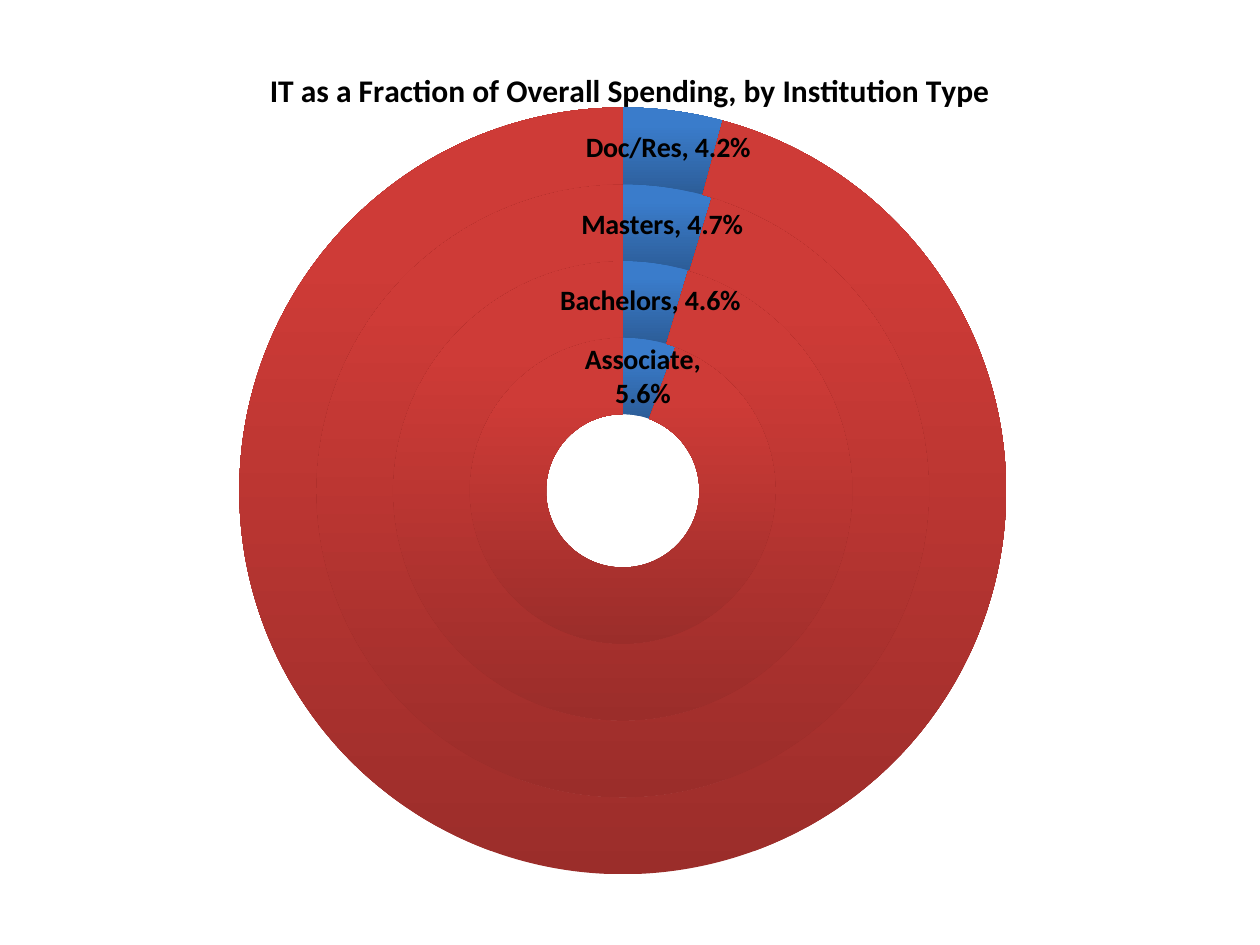
from pptx import Presentation
from pptx.chart.data import CategoryChartData
from pptx.dml.color import RGBColor
from pptx.enum.chart import XL_CHART_TYPE
from pptx.oxml import parse_xml
from pptx.oxml.ns import nsdecls, qn
from pptx.util import Inches, Pt


def color(value):
    return RGBColor.from_string(value)


def chart_xml(tag, content):
    return parse_xml(f"<c:{tag} {nsdecls('c')}>{content}</c:{tag}>")


SPENDING = {"Associate": 0.056, "Bachelors": 0.046, "Masters": 0.047, "Doc/Res": 0.042}
GRADIENTS = [("2C5D98", "3A7CCB"), ("9B2D2A", "CE3B37")]
PLOT_LAYOUT = {"x": 0.173, "y": 0.078, "w": 0.642, "h": 0.885}

deck = Presentation()
deck.slide_width = Inches(10)
deck.slide_height = Inches(7.5)
page = deck.slides.add_slide(deck.slide_layouts[6])

data = CategoryChartData(number_format="0.0%")
data.categories = ["1", "2"]
for institution, share in SPENDING.items():
    data.add_series(institution, [share, round(1 - share, 3)])

chart = page.shapes.add_chart(
    XL_CHART_TYPE.DOUGHNUT, Inches(0.26), Inches(0.31), Inches(9.48), Inches(6.89), data
).chart
chart.has_legend = False
chart.font.name = "Calibri"
chart.font.size = Pt(10)
chart.font.color.rgb = color("000000")

chart.has_title = True
para = chart.chart_title.text_frame.paragraphs[0]
span = para.add_run()
span.text = "IT as a Fraction of Overall Spending, by Institution Type"
span.font.name = "Calibri"
span.font.size = Pt(18)
span.font.bold = True
span.font.color.rgb = color("000000")

plot = chart.plots[0]
plot.vary_by_categories = True
for series in plot.series:
    for index, (bottom, top) in enumerate(GRADIENTS):
        fill = series.points[index].format.fill
        fill.gradient()
        fill.gradient_angle = 90
        for stop, shade, position in zip(fill.gradient_stops, (bottom, top), (0, 0.8)):
            stop.color.rgb = color(shade)
            stop.position = position

    labels = series.data_labels
    labels.show_value = True
    labels.show_series_name = True
    labels.number_format = "0.0%"
    labels.number_format_is_linked = False
    labels.font.name = "Calibri"
    labels.font.size = Pt(16)
    labels.font.bold = True
    labels.font.color.rgb = color("000000")
    element = labels._element
    element.insert(0, chart_xml("dLbl", '<c:idx val="1"/><c:delete val="1"/>'))
    bubble = element.find(qn("c:showBubbleSize"))
    bubble.addnext(chart_xml("separator", ", "))

root = chart._chartSpace
for hole in root.iter(qn("c:holeSize")):
    hole.set("val", "20")

plot_area = root.find(qn("c:chart")).find(qn("c:plotArea"))
for layout in plot_area.findall(qn("c:layout")):
    plot_area.remove(layout)
modes = '<c:layoutTarget val="inner"/><c:xMode val="edge"/><c:yMode val="edge"/>'
sizes = "".join(f'<c:{side} val="{value}"/>' for side, value in PLOT_LAYOUT.items())
plot_area.insert(0, chart_xml("layout", f"<c:manualLayout>{modes}{sizes}</c:manualLayout>"))

deck.save("out.pptx")
